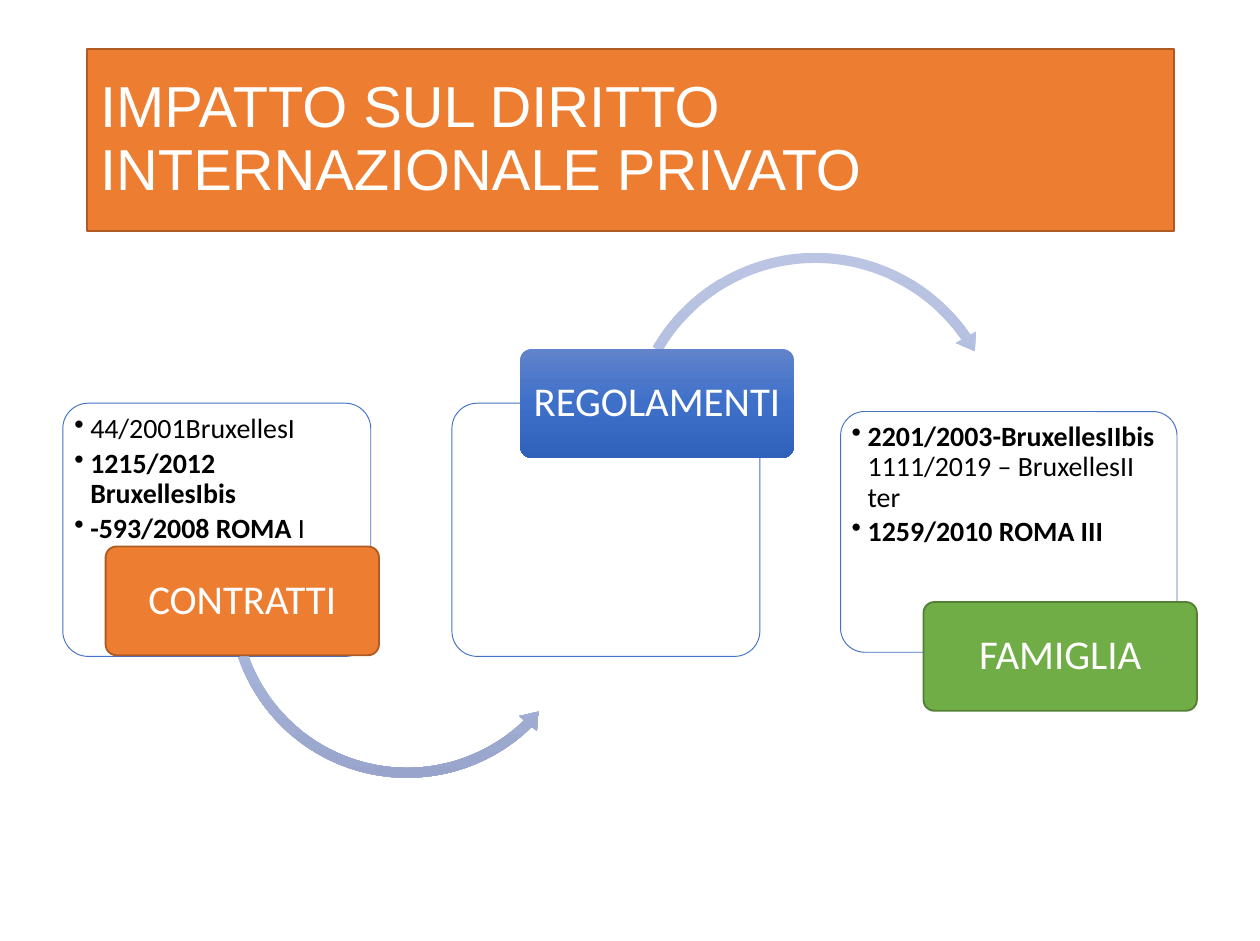
"""Build the slide on regulations of private international law."""
import copy

import pptx
import pptx.dml.color
import pptx.enum.shapes
import pptx.enum.text
import pptx.oxml.ns
import pptx.util

Pt = pptx.util.Pt
KIND = pptx.enum.shapes.MSO_SHAPE
ALIGN = pptx.enum.text.PP_ALIGN
ANCHOR = pptx.enum.text.MSO_ANCHOR

SIZE = 677.5, 506.2
COLORS = {
    "white": "FFFFFF", "black": "000000", "edge": "4472C4",
    "orange": "ED7D31", "rust": "AF5C24", "green": "70AD47", "moss": "538035",
}
BLUES = ["6183CB", "3E70CA", "3062BB"]
PALES = ["BBC5E3", "AEBBE0", "98A4CB"]

TITLE = "IMPATTO SUL DIRITTO INTERNAZIONALE PRIVATO"
TITLE_BOX = 46.8, 26.6, 584.6, 97.9
BADGE_SIZE = 147, 58.5

STEPS = [
    {
        "card": (33.8, 216.9, 165.6, 136.2),
        "items": [
            [("44/2001BruxellesI", False)],
            [("1215/2012 BruxellesIbis", True)],
            [("-593/2008 ROMA ", True), ("I", False)],
        ],
        "arrow": (KIND.LEFT_CIRCULAR_ARROW, (119.5, 223.2, 198.7, 198.7),
                  (0.027, 3.272, 27.41, 96.628, 0.031)),
        "badge": ("CONTRATTI", (56.8, 294), "orange", "rust"),
    },
    {
        "card": (243, 216.9, 165.6, 136.2),
        "items": [],
        "arrow": (KIND.CIRCULAR_ARROW, (334.1, 132.5, 208.8, 208.8),
                  (0.026, 3.095, 195.36, 125.965, 0.03)),
        "badge": ("REGOLAMENTI", (279.8, 187.8), BLUES, None),
    },
    {
        "card": (452, 221.4, 180.9, 129.5),
        "items": [
            [("2201/2003-BruxellesIIbis", True),
             (" 1111/2019 – BruxellesII ter", False)],
            [("1259/2010 ROMA III", True)],
        ],
        "arrow": None,
        "badge": ("FAMIGLIA", (496.6, 323.9), "green", "moss"),
    },
]

FONTS = {
    "title": {"name": "Arial", "size": Pt(31.1)},
    "badge": {"name": "Calibri", "size": Pt(22)},
    "item": {"name": "Calibri", "size": Pt(15)},
}
FRAMES = {
    "title": {"vertical_anchor": ANCHOR.MIDDLE},
    "badge": {"vertical_anchor": ANCHOR.MIDDLE,
              "margin_left": Pt(3.6), "margin_right": Pt(3.6),
              "margin_top": Pt(2.2), "margin_bottom": Pt(2.2)},
    "item": {"vertical_anchor": ANCHOR.TOP,
             "margin_left": Pt(2.2), "margin_right": Pt(2.2),
             "margin_top": Pt(2.2), "margin_bottom": Pt(2.2)},
}
PARAS = {
    "title": {"alignment": ALIGN.LEFT, "line_spacing": 0.9},
    "badge": {"alignment": ALIGN.CENTER, "line_spacing": 0.9},
    "item": {"alignment": ALIGN.LEFT, "line_spacing": 0.9,
             "space_after": Pt(2.5)},
}


def apply(target, values):
    """Set each named attribute."""
    for name, value in values.items():
        setattr(target, name, value)


def rgb(code):
    """Turn a hex string into a colour."""
    return pptx.dml.color.RGBColor.from_string(code)


def blend(shape, codes):
    """Fill a shape from top to bottom with evenly spaced colours."""
    fill = shape.fill
    fill.gradient()
    fill.gradient_angle = 270
    stops = shape._element.spPr.find(".//" + pptx.oxml.ns.qn("a:gsLst"))
    stops.append(copy.deepcopy(stops[-1]))
    for rank, (stop, code) in enumerate(zip(fill.gradient_stops, codes)):
        stop.color.rgb = rgb(code)
        stop.position = rank / (len(codes) - 1)


def draw(slide, kind, box, fill, line=None, width=1, adjust=()):
    """Add a preset shape with its fill, line and adjustments."""
    shape = slide.shapes.add_shape(kind, *map(Pt, box))
    shape.shadow.inherit = False
    for rank, value in enumerate(adjust):
        shape.adjustments[rank] = value
    if isinstance(fill, list):
        blend(shape, fill)
    else:
        shape.fill.solid()
        shape.fill.fore_color.rgb = rgb(COLORS[fill])
    if line:
        shape.line.color.rgb = rgb(COLORS[line])
        shape.line.width = Pt(width)
    else:
        shape.line.fill.background()
    return shape


def bullet(para):
    """Give a paragraph a hanging bullet."""
    props = para._p.get_or_add_pPr()
    props.set("marL", str(Pt(8.6)))
    props.set("indent", str(-Pt(8.6)))
    mark = pptx.oxml.parse_xml(
        f'<a:buChar {pptx.oxml.ns.nsdecls("a")} char="•"/>')
    props.append(mark)


def write(shape, items, style, color):
    """Write paragraphs of (text, bold) runs into a shape."""
    frame = shape.text_frame
    frame.word_wrap = True
    apply(frame, FRAMES[style])
    for rank, runs in enumerate(items):
        para = frame.add_paragraph() if rank else frame.paragraphs[0]
        if style == "item":
            bullet(para)
        apply(para, PARAS[style])
        for text, bold in runs:
            run = para.add_run()
            run.text = text
            apply(run.font, {**FONTS[style], "bold": bold})
            run.font.color.rgb = rgb(COLORS[color])


def main():
    """Draw the title and the three steps, then save."""
    deck = pptx.Presentation()
    apply(deck, {"slide_width": Pt(SIZE[0]), "slide_height": Pt(SIZE[1])})
    slide = deck.slides.add_slide(deck.slide_layouts[6])
    title = draw(slide, KIND.RECTANGLE, TITLE_BOX, "orange", "rust")
    write(title, [[(TITLE, False)]], "title", "white")
    for step in STEPS:
        card = draw(slide, KIND.ROUNDED_RECTANGLE, step["card"],
                    "white", "edge", 0.5, [0.1])
        write(card, step["items"], "item", "black")
        if step["arrow"]:
            kind, box, adjust = step["arrow"]
            draw(slide, kind, box, PALES, adjust=adjust)
        label, place, fill, line = step["badge"]
        badge = draw(slide, KIND.ROUNDED_RECTANGLE, place + BADGE_SIZE,
                     fill, line, adjust=[0.1])
        write(badge, [[(label, False)]], "badge", "white")
    deck.save("out.pptx")


if __name__ == "__main__":
    main()
